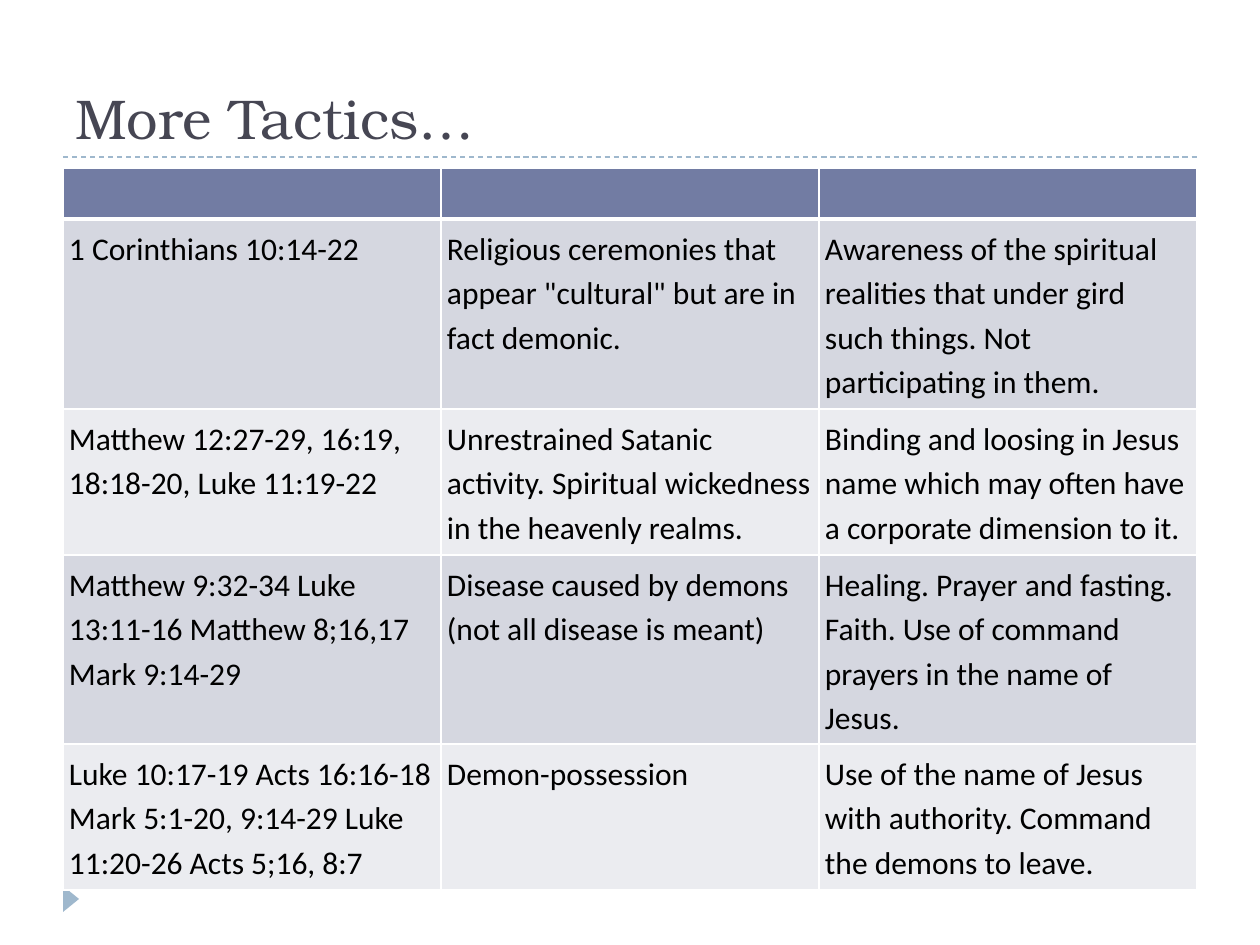
from typing import NamedTuple

from lxml.etree import SubElement
from pptx import Presentation
from pptx.dml.color import RGBColor
from pptx.enum.dml import MSO_LINE
from pptx.enum.shapes import MSO_CONNECTOR, MSO_SHAPE
from pptx.enum.text import MSO_ANCHOR
from pptx.oxml.ns import qn
from pptx.util import Emu, Pt

LEFT, RIGHT = 63, 1197
PALE = "9FB8CD"
HEAD = "727CA3"
BANDS = ("D5D7E0", "EBECF0")


class Row(NamedTuple):
    high: int
    texts: tuple[str, ...]


ROWS = (
    Row(51, ("", "", "")),
    Row(190, (
        "1 Corinthians 10:14-22",
        'Religious ceremonies that appear "cultural" but are in fact demonic.',
        "Awareness of the spiritual realities that under gird such things. "
        "Not participating in them.",
    )),
    Row(146, (
        "Matthew 12:27-29, 16:19, 18:18-20, Luke 11:19-22",
        "Unrestrained Satanic activity. Spiritual wickedness in the heavenly realms.",
        "Binding and loosing in Jesus name which may often have a corporate "
        "dimension to it.",
    )),
    Row(189, (
        "Matthew 9:32-34 Luke 13:11-16 Matthew 8;16,17 Mark 9:14-29",
        "Disease caused by demons (not all disease is meant)",
        "Healing. Prayer and fasting. Faith. Use of command prayers in the "
        "name of Jesus.",
    )),
    Row(146, (
        "Luke 10:17-19 Acts 16:16-18 Mark 5:1-20, 9:14-29 Luke 11:20-26 "
        "Acts 5;16, 8:7",
        "Demon-possession",
        "Use of the name of Jesus with authority. Command the demons to leave.",
    )),
)


def px(n: int) -> Emu:
    return Emu(round(n * 914400 / 126))


def tint(code: str) -> RGBColor:
    return RGBColor.from_string(code)


def style(para, face: str, size: int, color: str) -> None:
    for run in para.runs:
        run.font.name = face
        run.font.size = Pt(size)
        run.font.color.rgb = tint(color)


def edge(cell, top: int, low: int) -> None:
    """Give a cell white borders; top and low are widths in points."""
    props = cell._tc.get_or_add_tcPr()
    for side, wide in (("L", 1), ("R", 1), ("T", top), ("B", low)):
        line = SubElement(props, qn(f"a:ln{side}"), w=str(Pt(wide)))
        fill = SubElement(line, qn("a:solidFill"))
        SubElement(fill, qn("a:srgbClr"), val="FFFFFF")


def draw_rule(slide, y: int) -> None:
    rule = slide.shapes.add_connector(
        MSO_CONNECTOR.STRAIGHT, px(LEFT), px(y), px(RIGHT), px(y))
    rule.line.color.rgb = tint(PALE)
    rule.line.width = Pt(0.75)
    rule.line.dash_style = MSO_LINE.DASH
    SubElement(rule._element.spPr, qn("a:effectLst"))


def draw_mark(slide) -> None:
    mark = slide.shapes.add_shape(
        MSO_SHAPE.ISOSCELES_TRIANGLE, px(58), px(891), px(26), px(16))
    mark.rotation = 90
    mark.shadow.inherit = False
    mark.fill.solid()
    mark.fill.fore_color.rgb = tint(PALE)
    mark.line.fill.background()


def draw_title(slide, text: str) -> None:
    box = slide.shapes.add_textbox(px(LEFT), px(21), px(RIGHT - LEFT), px(136))
    frame = box.text_frame
    frame.word_wrap = True
    frame.vertical_anchor = MSO_ANCHOR.BOTTOM
    frame.text = text
    style(frame.paragraphs[0], "TeX Gyre Bonum", 32, "464653")


def fill_cell(cell, text: str, color: str) -> None:
    cell.fill.solid()
    cell.fill.fore_color.rgb = tint(color)
    cell.margin_left = cell.margin_right = px(6)
    cell.margin_top = cell.margin_bottom = px(6)
    if text:
        cell.text = text
        para = cell.text_frame.paragraphs[0]
        para.line_spacing = 1.15
        para.space_after = Pt(10)
        style(para, "Calibri", 18, "000000")


def draw_table(slide, rows: tuple[Row, ...]) -> None:
    cols = len(rows[0].texts)
    table = slide.shapes.add_table(
        len(rows), cols, px(LEFT), px(168), px(RIGHT - LEFT),
        px(sum(row.high for row in rows))).table
    for col in table.columns:
        col.width = px((RIGHT - LEFT) // cols)
    for r, row in enumerate(rows):
        table.rows[r].height = px(row.high)
        color = BANDS[(r - 1) % 2] if r else HEAD
        for c, text in enumerate(row.texts):
            cell = table.cell(r, c)
            edge(cell, 3 if r == 1 else 1, 3 if r == 0 else 1)
            fill_cell(cell, text, color)


def main() -> None:
    deck = Presentation()
    deck.slide_width, deck.slide_height = px(1260), px(945)
    slide = deck.slides.add_slide(deck.slide_layouts[6])
    draw_rule(slide, 157)
    draw_mark(slide)
    draw_title(slide, "More Tactics…")
    draw_table(slide, ROWS)
    deck.save("out.pptx")


if __name__ == "__main__":
    main()
